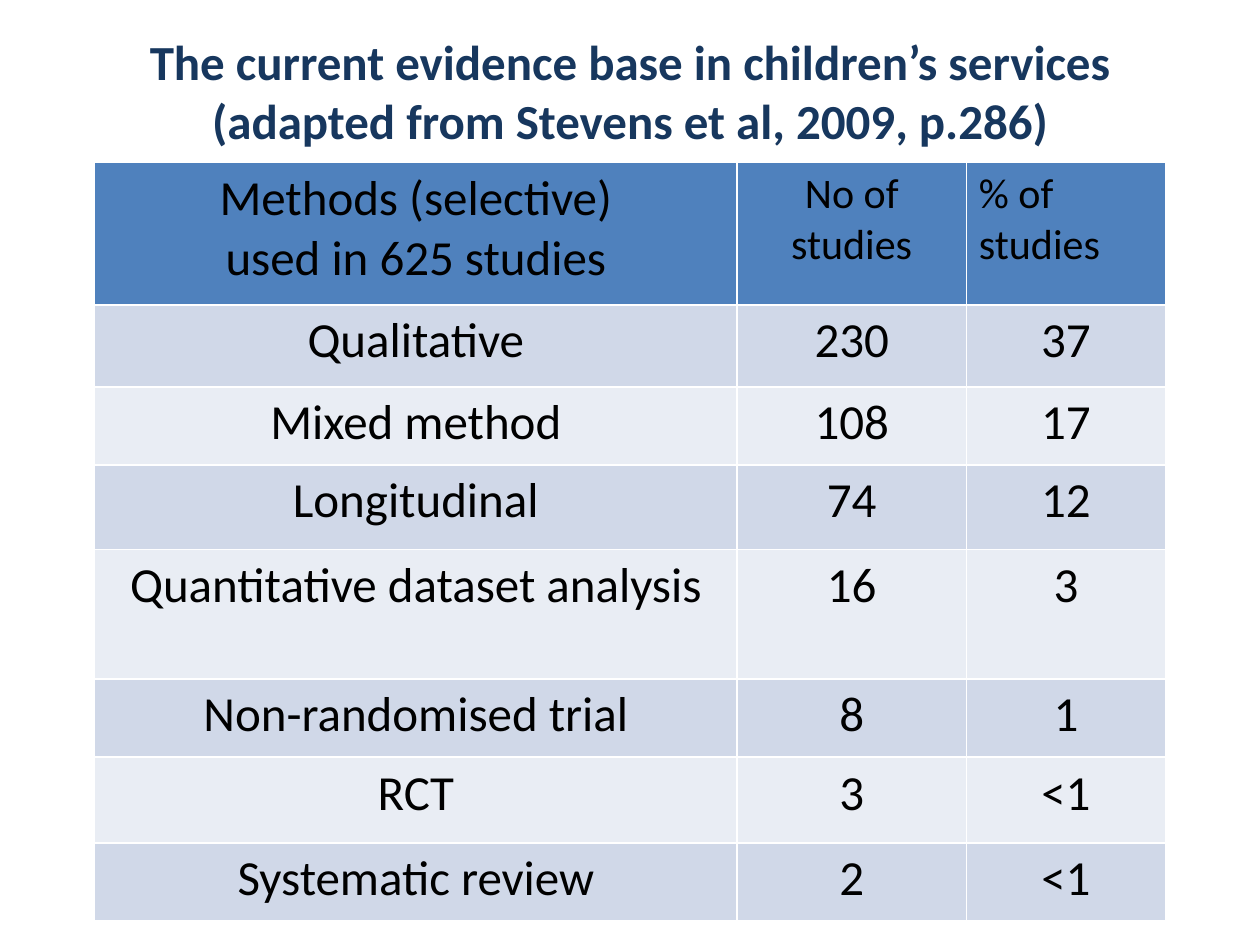
from typing import NamedTuple

from pptx import Presentation
from pptx.dml.color import RGBColor
from pptx.enum.text import MSO_ANCHOR, PP_ALIGN
from pptx.util import Inches, Pt

W, H = 10, 7.5
LEFT, WIDTH = 0.075 * W, 0.85 * W  # shared by title and table
COLS = [5.1, 1.82, 1.58]
HEADER_FILL, BANDS = "4F81BD", ("E9EDF4", "D0D8E8")


class Row(NamedTuple):
    height: float
    cells: tuple[str, str, str]


ROWS = [
    Row(1.13, ("Methods (selective)\nused in 625 studies", "No of studies", "% of studies")),
    Row(0.65, ("Qualitative", "230", "37")),
    Row(0.62, ("Mixed method", "108", "17")),
    Row(0.67, ("Longitudinal", "74", "12")),
    Row(1.03, ("Quantitative dataset analysis", "16", "3")),
    Row(0.62, ("Non-randomised trial", "8", "1")),
    Row(0.68, ("RCT", "3", "<1")),
    Row(0.62, ("Systematic review", "2", "<1")),
]


def rgb(color: str) -> RGBColor:
    return RGBColor.from_string(color)


def write(tf, text: str, size: float, color: str = "000000",
          bold: bool = False, align=PP_ALIGN.CENTER) -> None:
    tf.text = text
    for p in tf.paragraphs:
        p.alignment = align
        for r in p.runs:
            r.font.name = "Calibri"
            r.font.size = Pt(size)
            r.font.bold = bold
            r.font.color.rgb = rgb(color)


def add_title(s, text: str) -> None:
    sp = s.shapes.add_textbox(Inches(LEFT), Inches(0.21), Inches(WIDTH), Inches(1.02))
    tf = sp.text_frame
    tf.word_wrap = True
    tf.vertical_anchor = MSO_ANCHOR.MIDDLE
    write(tf, text, 28, "17375E", bold=True)


def add_methods_table(s, rows: list[Row]) -> None:
    height = sum(row.height for row in rows)
    table = s.shapes.add_table(len(rows), len(COLS), Inches(LEFT), Inches(1.29),
                               Inches(WIDTH), Inches(height)).table
    for column, width in zip(table.columns, COLS):
        column.width = Inches(width)
    for i, row in enumerate(rows):
        table.rows[i].height = Inches(row.height)
        for j, text in enumerate(row.cells):
            cell = table.cell(i, j)
            cell.fill.solid()
            cell.fill.fore_color.rgb = rgb(BANDS[i % 2] if i else HEADER_FILL)
            # Number headings are smaller; the last one is left-aligned
            size = 24 if i == 0 and j > 0 else 28
            align = PP_ALIGN.LEFT if (i, j) == (0, 2) else PP_ALIGN.CENTER
            write(cell.text_frame, text, size, align=align)


def main() -> None:
    prs = Presentation()
    prs.slide_width, prs.slide_height = Inches(W), Inches(H)
    s = prs.slides.add_slide(prs.slide_layouts[6])
    add_title(s, "The current evidence base in children’s services "
                 "(adapted from Stevens et al, 2009, p.286)")
    add_methods_table(s, ROWS)
    prs.save("out.pptx")


if __name__ == "__main__":
    main()
